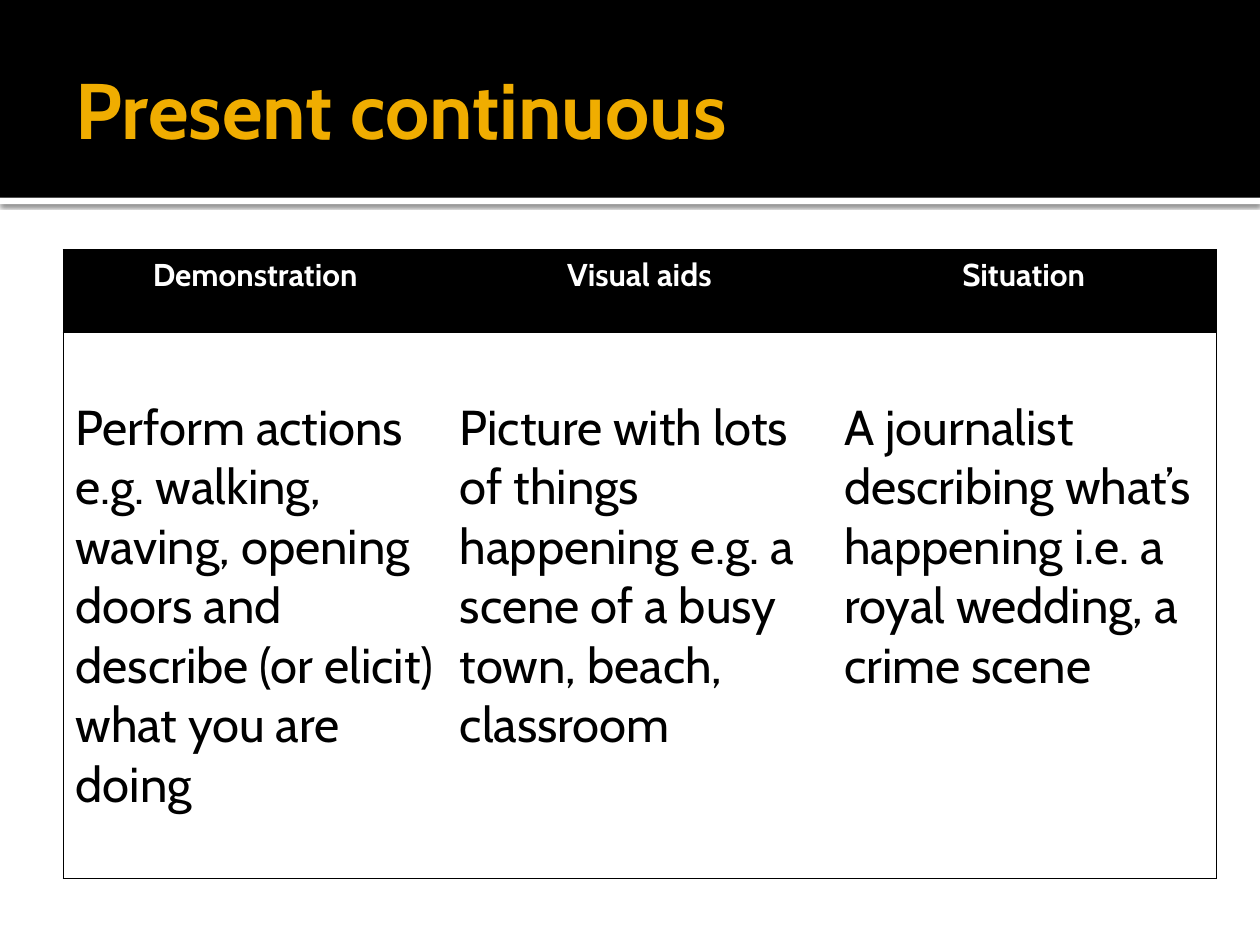
from lxml import etree
from pptx import Presentation
from pptx.dml.color import RGBColor
from pptx.enum.shapes import MSO_SHAPE
from pptx.enum.text import MSO_ANCHOR, PP_ALIGN
from pptx.oxml import parse_xml
from pptx.oxml.ns import nsdecls, qn
from pptx.util import Inches, Pt

RECT = MSO_SHAPE.RECTANGLE
MIDDLE, TOP = MSO_ANCHOR.MIDDLE, MSO_ANCHOR.TOP
LEFT, CENTER = PP_ALIGN.LEFT, PP_ALIGN.CENTER
BLACK = RGBColor(0x00, 0x00, 0x00)
WHITE = RGBColor(0xFF, 0xFF, 0xFF)
GOLD = RGBColor(0xF0, 0xAD, 0x00)
FONT = "Cabin"


def write(frame, text, size, color, bold=False, align=LEFT):
    para = frame.paragraphs[0]
    para.alignment = align
    run = para.add_run()
    run.text = text
    font = run.font
    font.name, font.size, font.bold = FONT, Pt(size), bold
    font.color.rgb = color


def edge(cell, side, shown):
    props = cell._tc.get_or_add_tcPr()
    line = etree.SubElement(props, qn("a:ln" + side), w=str(Pt(0.5)))
    if shown:
        fill = etree.SubElement(line, qn("a:solidFill"))
        etree.SubElement(fill, qn("a:srgbClr"), val=str(BLACK))
    else:
        etree.SubElement(line, qn("a:noFill"))


prs = Presentation()
prs.slide_width, prs.slide_height = Inches(10), Inches(7.5)
slide = prs.slides.add_slide(prs.slide_layouts[5])
shapes = slide.shapes

bars = []
for top, height, color in [(1.57, 0.05, WHITE), (0, 1.57, BLACK)]:
    bar = shapes.add_shape(RECT, 0, Inches(top), Inches(10), Inches(height))
    bar.shadow.inherit = False
    bar.fill.solid()
    bar.fill.fore_color.rgb = color
    bar.line.fill.background()
    bars.append(bar)

effect = bars[0]._element.spPr.find(qn("a:effectLst"))
effect.append(parse_xml(
    f'<a:outerShdw {nsdecls("a")} blurRad="{Pt(2.5)}" dist="{Pt(0.8)}" '
    'dir="5400000" algn="t" rotWithShape="0">'
    f'<a:srgbClr val="{BLACK}"><a:alpha val="60000"/></a:srgbClr>'
    '</a:outerShdw>'))

title = shapes.title
title.element.getparent().append(title.element)
title.left, title.top = Inches(0.5), Inches(0.17)
title.width, title.height = Inches(9), Inches(1.37)
frame = title.text_frame
frame.word_wrap = True
frame.vertical_anchor = MIDDLE
frame.margin_left = Inches(0.1)
frame.margin_top = frame.margin_right = frame.margin_bottom = Inches(0.05)
write(frame, "Present continuous", 45, GOLD, bold=True)

rows = [
    ["Demonstration", "Visual aids", "Situation"],
    ["Perform actions e.g. walking, waving, opening doors and describe "
     "(or elicit) what you are doing",
     "Picture with lots of things happening e.g. a scene of a busy town, "
     "beach, classroom",
     "A journalist describing what’s happening i.e. a royal wedding, "
     "a crime scene"],
]
looks = [
    dict(size=18, color=WHITE, bold=True, align=CENTER),
    dict(size=28, color=BLACK),
]
fills = [BLACK, WHITE]
pads = [0.05, 0.52]
heights = [0.66, 4.33]

table = shapes.add_table(2, 3, Inches(0.5), Inches(1.98),
                         Inches(9.15), Inches(4.99)).table
table.first_row = table.horz_banding = False
for col in table.columns:
    col.width = Inches(3.05)
for r, texts in enumerate(rows):
    table.rows[r].height = Inches(heights[r])
    for c, text in enumerate(texts):
        cell = table.cell(r, c)
        cell.margin_left = cell.margin_right = Inches(0.1)
        cell.margin_top, cell.margin_bottom = Inches(pads[r]), Inches(0.05)
        cell.vertical_anchor = TOP
        for side, shown in [("L", c == 0), ("R", c == 2),
                            ("T", True), ("B", True)]:
            edge(cell, side, shown)
        cell.fill.solid()
        cell.fill.fore_color.rgb = fills[r]
        write(cell.text_frame, text, **looks[r])

prs.save("out.pptx")
